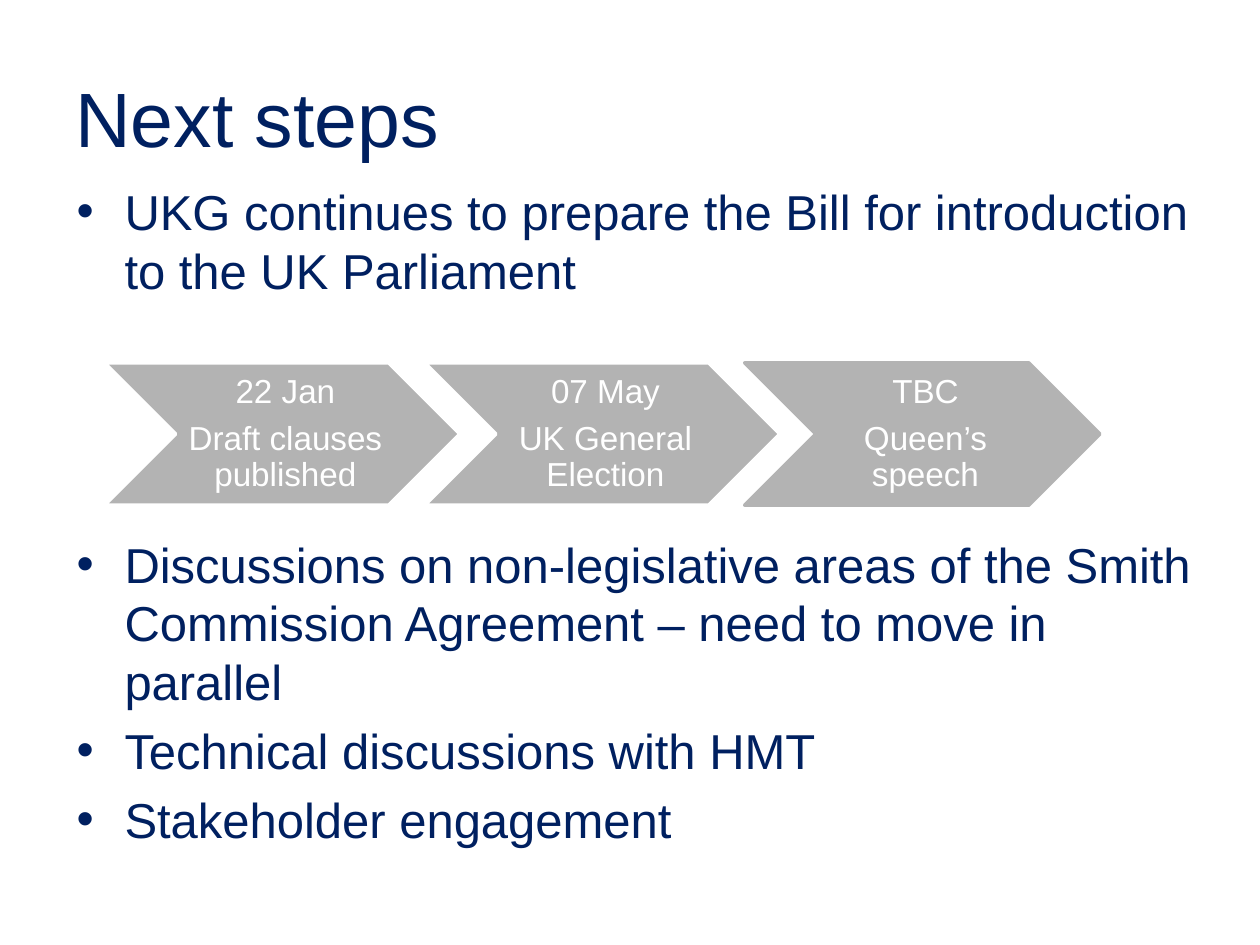
from dataclasses import dataclass

from lxml import etree
from pptx import Presentation
from pptx.dml.color import RGBColor
from pptx.enum.shapes import MSO_SHAPE
from pptx.enum.text import MSO_ANCHOR, PP_ALIGN
from pptx.oxml.ns import qn
from pptx.util import Inches, Pt

CHEVRON = MSO_SHAPE.CHEVRON
MIDDLE = MSO_ANCHOR.MIDDLE
TOP = MSO_ANCHOR.TOP
CENTER = PP_ALIGN.CENTER


@dataclass(frozen=True)
class Theme:
    font: str = "Arial"
    navy: RGBColor = RGBColor(0x00, 0x20, 0x60)
    grey: RGBColor = RGBColor(0xB3, 0xB3, 0xB3)
    white: RGBColor = RGBColor(0xFF, 0xFF, 0xFF)
    title_size: int = 44
    body_size: int = 28
    step_size: int = 19


class SlideBuilder:
    def __init__(self, slide, theme):
        self.slide = slide
        self.theme = theme

    def add_span(self, para, text, size, color):
        span = para.add_run()
        span.text = text
        span.font.name = self.theme.font
        span.font.size = Pt(size)
        span.font.color.rgb = color

    def text_frame(self, left, top, width, height, anchor):
        box = self.slide.shapes.add_textbox(
            Inches(left), Inches(top), Inches(width), Inches(height))
        frame = box.text_frame
        frame.word_wrap = True
        frame.vertical_anchor = anchor
        return frame

    def title(self, text, left, top, width, height):
        frame = self.text_frame(left, top, width, height, MIDDLE)
        self.add_span(frame.paragraphs[0], text,
                      self.theme.title_size, self.theme.navy)

    def bullets(self, items, left, top, width, height):
        frame = self.text_frame(left, top, width, height, TOP)
        indent = Inches(0.38)
        for index, text in enumerate(items):
            para = frame.add_paragraph() if index else frame.paragraphs[0]
            properties = para._p.get_or_add_pPr()
            properties.set("marL", str(indent))
            properties.set("indent", str(-indent))
            etree.SubElement(properties, qn("a:buFont"), typeface=self.theme.font)
            etree.SubElement(properties, qn("a:buChar"), char="•")
            if index:
                para.space_before = Pt(0.2 * self.theme.body_size)
            self.add_span(para, text, self.theme.body_size, self.theme.navy)

    def chevron(self, lines, left, top, width, height, outline):
        shape = self.slide.shapes.add_shape(
            CHEVRON, Inches(left), Inches(top), Inches(width), Inches(height))
        shape.shadow.inherit = False
        shape.fill.solid()
        shape.fill.fore_color.rgb = self.theme.grey
        shape.line.color.rgb = outline
        shape.line.width = Pt(2)

        frame = shape.text_frame
        frame.word_wrap = True
        frame.vertical_anchor = MIDDLE
        frame.margin_left = Inches(0.08)
        frame.margin_top = frame.margin_right = frame.margin_bottom = Inches(0.03)
        for index, text in enumerate(lines):
            para = frame.add_paragraph() if index else frame.paragraphs[0]
            para.alignment = CENTER
            para.line_spacing = 0.9
            para.space_after = Pt(0.35 * self.theme.step_size)
            self.add_span(para, text, self.theme.step_size, self.theme.white)


def main():
    deck = Presentation()
    deck.slide_width = Inches(10)
    deck.slide_height = Inches(7.5)
    page = deck.slides.add_slide(deck.slide_layouts[6])
    theme = Theme()
    builder = SlideBuilder(page, theme)

    # Title and opening point
    builder.title("Next steps", 0.5, 0.3, 9, 1.25)
    builder.bullets(
        ["UKG continues to prepare the Bill for introduction to the UK Parliament"],
        0.51, 1.39, 9.05, 1.1)

    # Timeline of chevrons
    steps = [
        (("22 Jan", "Draft clauses published"), theme.white),
        (("07 May", "UK General Election"), theme.white),
        (("TBC", "Queen’s speech"), theme.grey),
    ]
    for index, (lines, outline) in enumerate(steps):
        builder.chevron(lines, 0.83 + 2.54 * index, 2.88, 2.82, 1.13, outline)

    # Remaining points
    builder.bullets(
        ["Discussions on non-legislative areas of the Smith Commission "
         "Agreement – need to move in parallel",
         "Technical discussions with HMT",
         "Stakeholder engagement"],
        0.51, 4.19, 9.05, 2.63)

    deck.save("out.pptx")


if __name__ == "__main__":
    main()
